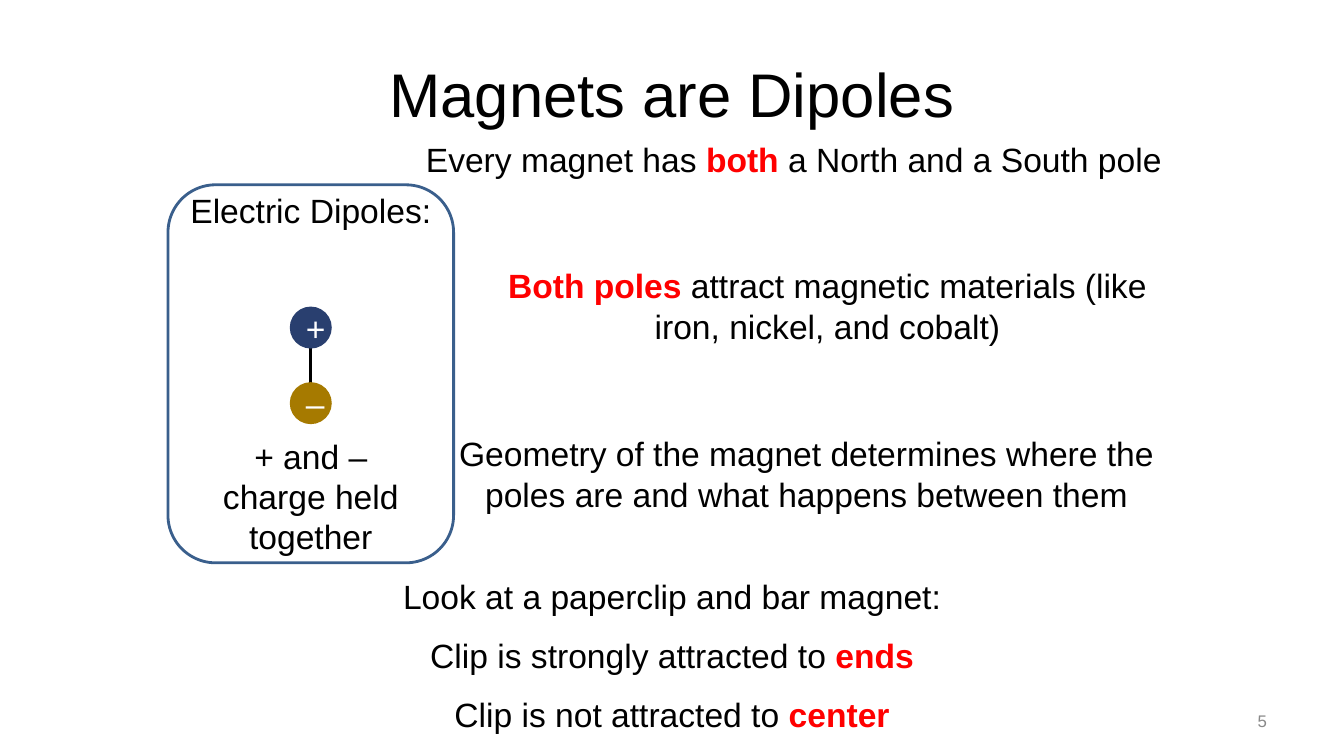
from dataclasses import dataclass

import pptx
import pptx.dml.color
import pptx.enum.shapes
import pptx.enum.text
import pptx.oxml
import pptx.util
from pptx.dml.color import RGBColor

BLACK = RGBColor(0x00, 0x00, 0x00)
WHITE = RGBColor(0xFF, 0xFF, 0xFF)
RED = RGBColor(0xFF, 0x00, 0x00)
GRAY = RGBColor(0x89, 0x89, 0x89)
NAVY = RGBColor(0x29, 0x3F, 0x6F)
GOLD = RGBColor(0xA6, 0x7A, 0x00)
BLUE = RGBColor(0x3A, 0x5F, 0x8C)

FONT = "Arial"
COLS, ROWS = 160, 90  # twelve grid cells to the inch
ALIGN = pptx.enum.text.PP_ALIGN
ANCHOR = pptx.enum.text.MSO_ANCHOR
KIND = pptx.enum.shapes.MSO_SHAPE


@dataclass
class Box:
    col: float
    row: float
    wide: float
    high: float


@dataclass
class Label:
    text: str  # words between asterisks are bold and red
    box: Box
    size: int = 24
    color: RGBColor = BLACK
    align: ALIGN = ALIGN.CENTER
    anchor: ANCHOR = ANCHOR.TOP


@dataclass
class Charge:
    sign: str
    row: float
    color: RGBColor


def cell(count: float) -> int:
    return pptx.util.Inches(count / 12)


def place(box: Box) -> tuple[int, int, int, int]:
    return cell(box.col), cell(box.row), cell(box.wide), cell(box.high)


def write(shape, label: Label) -> None:
    frame = shape.text_frame
    frame.word_wrap = True
    frame.vertical_anchor = label.anchor
    para = frame.paragraphs[0]
    para.alignment = label.align
    para.font.name = FONT
    para.font.size = pptx.util.Pt(label.size)
    para.font.color.rgb = label.color
    for index, part in enumerate(label.text.split("*")):
        if part:
            run = para.add_run()
            run.text = part
            if index % 2:
                run.font.bold = True
                run.font.color.rgb = RED


def add_label(slide, label: Label) -> None:
    write(slide.shapes.add_textbox(*place(label.box)), label)


def add_charge(slide, charge: Charge) -> None:
    box = Box(MID - DOT / 2, charge.row, DOT, DOT)
    ball = slide.shapes.add_shape(KIND.OVAL, *place(box))
    ball.shadow.inherit = False
    ball.fill.solid()
    ball.fill.fore_color.rgb = charge.color
    ball.line.fill.background()
    write(ball, Label(charge.sign, box, color=WHITE, anchor=ANCHOR.MIDDLE))


def add_bond(slide, col: float, top: float, end: float) -> None:
    bond = slide.shapes.add_connector(
        pptx.enum.shapes.MSO_CONNECTOR.STRAIGHT,
        cell(col), cell(top), cell(col), cell(end))
    bond.line.color.rgb = BLACK
    bond.line.width = pptx.util.Pt(2)
    props = bond._element.spPr
    props.append(pptx.oxml.parse_xml(
        '<a:effectLst xmlns:a="http://schemas.openxmlformats.org/drawingml/2006/main"/>'))


def add_frame(slide, box: Box) -> None:
    frame = slide.shapes.add_shape(KIND.ROUNDED_RECTANGLE, *place(box))
    frame.shadow.inherit = False
    frame.fill.background()
    frame.line.color.rgb = BLUE
    frame.line.width = pptx.util.Pt(2)


# Dipole panel
MID, DOT = 37, 5
PANEL = Box(20, 22, 34, 45)
CHARGES = [Charge("+", 36.5, NAVY), Charge("–", 45.5, GOLD)]

TITLE = Label("Magnets are Dipoles", Box(8, 3.6, 144, 15), 44, anchor=ANCHOR.MIDDLE)
NUMBER = Label("5", Box(114.75, 83.4, 37.25, 4.8), 12, GRAY, ALIGN.RIGHT, ANCHOR.MIDDLE)
NOTES = [
    Label("+ and – charge held together", Box(22.5, 51.25, 29, 15.75)),
    Label("Electric Dipoles:", Box(21, 22, 32, 6)),
    Label("Every magnet has *both* a North and a South pole", Box(49, 16, 91, 6)),
    Label("*Both poles* attract magnetic materials (like iron, nickel, and cobalt)",
          Box(57, 31, 83, 11)),
    Label("Geometry of the magnet determines where the poles are "
          "and what happens between them", Box(52, 51, 88, 11)),
]
CLIPS = [
    "Look at a paperclip and bar magnet:",
    "Clip is strongly attracted to *ends*",
    "Clip is not attracted to *center*",
]


def main() -> None:
    deck = pptx.Presentation()
    deck.slide_width, deck.slide_height = cell(COLS), cell(ROWS)
    slide = deck.slides.add_slide(deck.slide_layouts[6])

    add_label(slide, TITLE)

    # Electric dipole
    top, end = (charge.row + DOT / 2 for charge in CHARGES)
    add_bond(slide, MID, top, end)
    for charge in CHARGES:
        add_charge(slide, charge)
    add_frame(slide, PANEL)

    # Statements
    for note in NOTES:
        add_label(slide, note)
    for index, text in enumerate(CLIPS):
        add_label(slide, Label(text, Box(36, 68 + 7 * index, 88, 6)))

    add_label(slide, NUMBER)
    deck.save("out.pptx")


if __name__ == "__main__":
    main()
